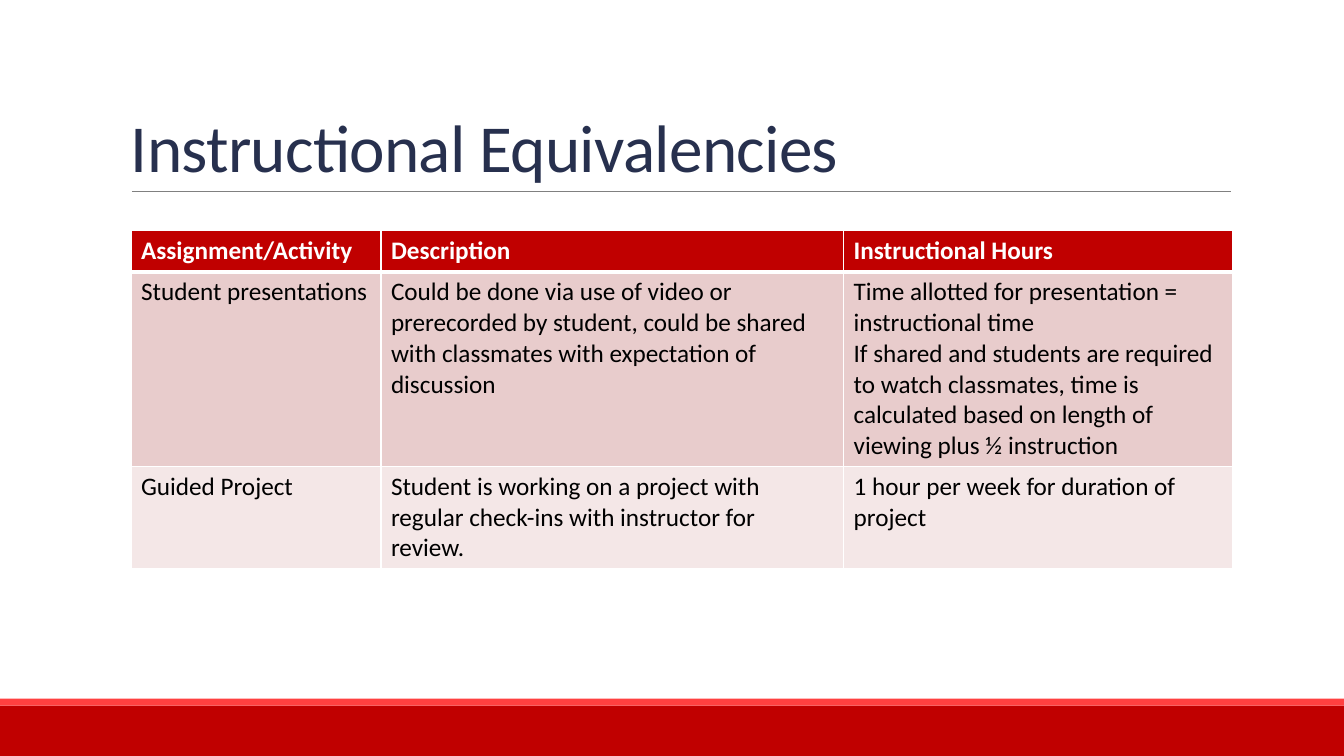
from dataclasses import dataclass

from lxml.etree import SubElement
from pptx import Presentation
from pptx.dml.color import RGBColor
from pptx.enum.shapes import MSO_CONNECTOR as Connector, MSO_SHAPE as Shape
from pptx.enum.text import MSO_ANCHOR as Anchor
from pptx.oxml import parse_xml
from pptx.oxml.ns import nsdecls, qn
from pptx.slide import Slide
from pptx.table import _Cell as Cell
from pptx.text.text import Font
from pptx.util import Pt

COLORS = {
    "red": "C00000",
    "light_red": "FF4040",
    "rule": "808080",
    "title": "27304E",
    "white": "FFFFFF",
    "black": "000000",
    "dark_row": "E8CCCC",
    "light_row": "F4E7E7",
}
FONT = "Calibri"
SLIDE_WIDTH, SLIDE_HEIGHT = 960, 540
COLUMN_WIDTHS = (178.5, 330.5, 278)


@dataclass(frozen=True)
class Band:
    top: float
    height: float
    color: str


@dataclass(frozen=True)
class ActivityRow:
    texts: tuple[str, str, str]
    height: float
    fill: str
    text_color: str = "black"
    bold: bool = False
    bottom_border: float = 1


FOOTER_BANDS = (Band(504, 36, "red"), Band(499, 5, "light_red"))
ACTIVITY_ROWS = (
    ActivityRow(
        ("Assignment/Activity", "Description", "Instructional Hours"),
        29.2, "red", "white", bold=True, bottom_border=3,
    ),
    ActivityRow(
        (
            "Student presentations",
            "Could be done via use of video or prerecorded by student, could be "
            "shared with classmates with expectation of discussion",
            "Time allotted for presentation = instructional time\n"
            "If shared and students are required to watch classmates, time is "
            "calculated based on length of viewing plus ½ instruction",
        ),
        139, "dark_row",
    ),
    ActivityRow(
        (
            "Guided Project",
            "Student is working on a project with regular check-ins with "
            "instructor for review.",
            "1 hour per week for duration of project",
        ),
        73, "light_row",
    ),
)


def rgb(name: str) -> RGBColor:
    return RGBColor.from_string(COLORS[name])


def set_font(font: Font, size: float, color: str, bold: bool = False) -> None:
    font.name = FONT
    font.size = Pt(size)
    font.bold = bold
    font.color.rgb = rgb(color)


def add_band(slide: Slide, band: Band) -> None:
    bar = slide.shapes.add_shape(
        Shape.RECTANGLE, 0, Pt(band.top), Pt(SLIDE_WIDTH), Pt(band.height)
    )
    bar.shadow.inherit = False
    bar.fill.solid()
    bar.fill.fore_color.rgb = rgb(band.color)
    bar.line.fill.background()


def add_title_rule(slide: Slide) -> None:
    rule = slide.shapes.add_connector(
        Connector.STRAIGHT, Pt(94.3), Pt(136.5), Pt(879), Pt(136.5)
    )
    rule.line.color.rgb = rgb("rule")
    rule.line.width = Pt(0.5)
    SubElement(rule._element.spPr, qn("a:effectLst"))


def add_title(slide: Slide, text: str) -> None:
    title = slide.shapes.add_textbox(Pt(86.4), Pt(22.5), Pt(792), Pt(114.3))
    frame = title.text_frame
    frame.word_wrap = True
    frame.vertical_anchor = Anchor.BOTTOM
    frame.text = text
    paragraph = frame.paragraphs[0]
    paragraph.line_spacing = 0.85
    set_font(paragraph.font, 48, "title")
    paragraph.runs[0].font._element.set("spc", "-50")


def set_borders(cell: Cell, bottom: float) -> None:
    """Draw white edges; they must precede the fill in the cell properties."""
    widths = {"lnL": 1, "lnR": 1, "lnT": 1, "lnB": bottom}
    properties = cell._tc.get_or_add_tcPr()
    for position, (edge, width) in enumerate(widths.items()):
        properties.insert(position, parse_xml(
            f'<a:{edge} {nsdecls("a")} w="{Pt(width)}"><a:solidFill>'
            f'<a:srgbClr val="{COLORS["white"]}"/></a:solidFill></a:{edge}>'
        ))


def fill_cell(cell: Cell, text: str, row: ActivityRow) -> None:
    cell.text = text
    for paragraph in cell.text_frame.paragraphs:
        set_font(paragraph.font, 18, row.text_color, row.bold)
    cell.fill.solid()
    cell.fill.fore_color.rgb = rgb(row.fill)
    set_borders(cell, row.bottom_border)


def add_activity_table(slide: Slide) -> None:
    activities = slide.shapes.add_table(
        len(ACTIVITY_ROWS), len(COLUMN_WIDTHS), Pt(93.6), Pt(164.9),
        Pt(sum(COLUMN_WIDTHS)), Pt(sum(row.height for row in ACTIVITY_ROWS)),
    ).table
    for column, width in zip(activities.columns, COLUMN_WIDTHS):
        column.width = Pt(width)
    for table_row, row in zip(activities.rows, ACTIVITY_ROWS):
        table_row.height = Pt(row.height)
        for cell, text in zip(table_row.cells, row.texts):
            fill_cell(cell, text, row)


def main() -> None:
    presentation = Presentation()
    presentation.slide_width = Pt(SLIDE_WIDTH)
    presentation.slide_height = Pt(SLIDE_HEIGHT)
    slide = presentation.slides.add_slide(presentation.slide_layouts[6])
    for band in FOOTER_BANDS:
        add_band(slide, band)
    add_title_rule(slide)
    add_title(slide, "Instructional Equivalencies")
    add_activity_table(slide)
    presentation.save("out.pptx")


if __name__ == "__main__":
    main()
